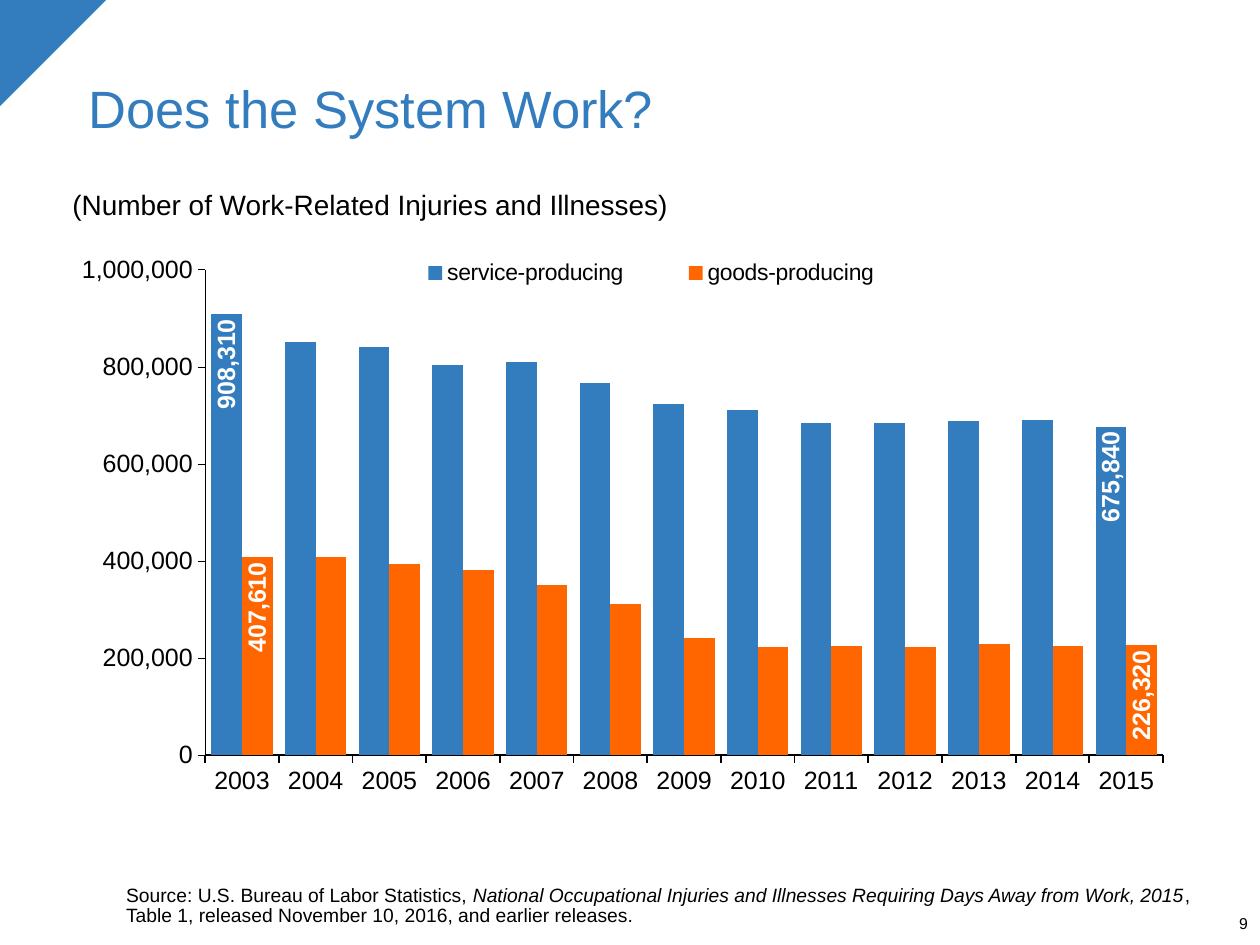
import pptx
import pptx.chart.data
import pptx.dml.color
import pptx.enum.chart
import pptx.enum.shapes
import pptx.enum.text
import pptx.oxml
import pptx.oxml.ns
import pptx.util

BLUE, ORANGE, BLACK, WHITE = "337DBE", "FF6600", "000000", "FFFFFF"
ALIGN = pptx.enum.text.PP_ALIGN
ANCHOR = pptx.enum.text.MSO_ANCHOR
YEARS = [str(year) for year in range(2003, 2016)]
SERVICE = [908310, 850930, 840580, 803060, 809420, 766250, 723680,
           710170, 684390, 683640, 687560, 691260, 675840]
GOODS = [407610, 408400, 394090, 380440, 349450, 311890, 241310,
         223020, 223920, 222050, 229530, 225180, 226320]


def px(length):
    return round(length * 914400 / 126)


def color(value):
    return pptx.dml.color.RGBColor.from_string(value)


def chart_xml(markup):
    return pptx.oxml.parse_xml(
        markup.replace(">", f' {pptx.oxml.ns.nsdecls("c")}>', 1))


def manual_layout(x, y, width, height, inner=False):
    target = '<c:layoutTarget val="inner"/>' if inner else ""
    sizes = "".join(f'<c:{key} val="{value}"/>' for key, value in
                    zip("xywh", (x, y, width, height)))
    return chart_xml('<c:layout><c:manualLayout>' + target
                     + '<c:xMode val="edge"/><c:yMode val="edge"/>'
                     + sizes + '</c:manualLayout></c:layout>')


class SlideBuilder:
    """Holds the font and the current slide, and adds styled elements to it."""

    def __init__(self, slide, font_name):
        self.slide = slide
        self.font_name = font_name

    def style(self, font, size, value=BLACK, bold=False):
        font.name = self.font_name
        font.size = pptx.util.Pt(size)
        font.bold = bold
        font.color.rgb = color(value)

    def fill_text(self, shape, runs, size, value=BLACK, align=ALIGN.LEFT,
                  anchor=ANCHOR.TOP, spacing=1.0, insets=None):
        frame = shape.text_frame
        frame.word_wrap = True
        frame.auto_size = pptx.enum.text.MSO_AUTO_SIZE.NONE
        frame.vertical_anchor = anchor
        if insets:
            (frame.margin_left, frame.margin_top,
             frame.margin_right, frame.margin_bottom) = map(px, insets)
        paragraph = frame.paragraphs[0]
        paragraph.alignment = align
        paragraph.line_spacing = spacing
        paragraph.space_before = pptx.util.Pt(0)
        for text, italic in runs:
            run = paragraph.add_run()
            run.text = text
            if italic:
                run.font.italic = True
        self.style(paragraph.font, size, value)

    def title(self, box, text):
        shape = self.slide.shapes.title
        shape.left, shape.top, shape.width, shape.height = map(px, box)
        self.fill_text(shape, [(text, False)], 30, BLUE,
                       anchor=ANCHOR.BOTTOM, spacing=0.9)

    def text(self, box, runs, size, **options):
        shape = self.slide.shapes.add_textbox(*map(px, box))
        self.fill_text(shape, runs, size, **options)

    def corner(self, size):
        shape = self.slide.shapes.add_shape(
            pptx.enum.shapes.MSO_SHAPE.RIGHT_TRIANGLE, 0, 0, px(size), px(size))
        shape.rotation = 90
        shape.shadow.inherit = False
        shape.fill.solid()
        shape.fill.fore_color.rgb = color(BLUE)
        shape.line.fill.background()

    def axis(self, axis, width):
        axis.has_major_gridlines = False
        axis.major_tick_mark = pptx.enum.chart.XL_TICK_MARK.OUTSIDE
        axis.format.line.color.rgb = color(BLACK)
        axis.format.line.width = pptx.util.Pt(width)
        self.style(axis.tick_labels.font, 14.3)

    def end_labels(self, series, last):
        labels = series.data_labels
        labels.show_value = True
        labels.number_format = "#,##0"
        labels.number_format_is_linked = False
        labels.position = pptx.enum.chart.XL_LABEL_POSITION.INSIDE_END
        self.style(labels.font, 14.3, WHITE, bold=True)
        element = labels._element
        body = element.find(".//" + pptx.oxml.ns.qn("a:bodyPr"))
        body.set("rot", "-5400000")
        body.set("vert", "horz")
        for index in range(1, last):
            element.insert(index - 1, chart_xml(
                f'<c:dLbl><c:idx val="{index}"/><c:delete val="1"/></c:dLbl>'))

    def column_chart(self, box, categories, series_list):
        data = pptx.chart.data.CategoryChartData(number_format="#,##0")
        data.categories = categories
        for name, values, _ in series_list:
            data.add_series(name, values)
        chart = self.slide.shapes.add_chart(
            pptx.enum.chart.XL_CHART_TYPE.COLUMN_CLUSTERED,
            *map(px, box), data).chart
        chart.has_title = False
        self.style(chart.font, 14.3)
        plot = chart.plots[0]
        plot.gap_width = 40
        plot.overlap = 0
        plot.vary_by_categories = False
        for series, (_, _, fill) in zip(plot.series, series_list):
            series.format.fill.solid()
            series.format.fill.fore_color.rgb = color(fill)
            self.end_labels(series, len(categories) - 1)

        self.axis(chart.category_axis, 1.02)
        chart.category_axis.tick_label_position = (
            pptx.enum.chart.XL_TICK_LABEL_POSITION.LOW)
        value_axis = chart.value_axis
        self.axis(value_axis, 0.25)
        value_axis.minimum_scale = 0
        value_axis.maximum_scale = 1000000
        value_axis.major_unit = 200000
        value_axis.tick_labels.number_format = "#,##0"
        value_axis.tick_labels.number_format_is_linked = False

        chart.has_legend = True
        legend = chart.legend
        legend.position = pptx.enum.chart.XL_LEGEND_POSITION.TOP
        legend.include_in_layout = False
        self.style(legend.font, 13.1)
        layout_tag = pptx.oxml.ns.qn("c:layout")
        layouts = (
            (legend._element, 1, manual_layout(0.28, 0.13, 0.51, 0.05)),
            (chart._chartSpace.chart.plotArea, 0,
             manual_layout(0.13, 0.15, 0.87, 0.73, inner=True)))
        for parent, index, layout in layouts:
            for previous in parent.findall(layout_tag):
                parent.remove(previous)
            parent.insert(index, layout)


def main():
    presentation = pptx.Presentation()
    presentation.slide_width, presentation.slide_height = px(1260), px(945)
    slide = presentation.slides.add_slide(presentation.slide_layouts[5])
    builder = SlideBuilder(slide, "Arial")
    builder.corner(106)
    builder.text((1186, 917, 62, 16), [("9", False)], 9, align=ALIGN.RIGHT,
                 spacing=0.85, insets=(0, 0, 0, 0))
    builder.title((76, 28, 964, 118), "Does the System Work?")
    builder.column_chart((62, 170, 1102, 665), YEARS, [
        ("service-producing", SERVICE, BLUE),
        ("goods-producing", GOODS, ORANGE)])
    builder.text((76, 886, 1125, 59), [
        ("Source: U.S. Bureau of Labor Statistics, ", False),
        ("National Occupational Injuries and Illnesses Requiring Days Away "
         "from Work, 2015", True),
        (", Table 1, released November 10, 2016, and earlier releases.", False),
    ], 11, anchor=ANCHOR.BOTTOM, spacing=0.85, insets=(50, 0, 0, 19))
    builder.text((60, 181, 639, 47),
                 [("(Number of Work-Related Injuries and Illnesses)", False)], 16)
    presentation.save("out.pptx")


if __name__ == "__main__":
    main()
